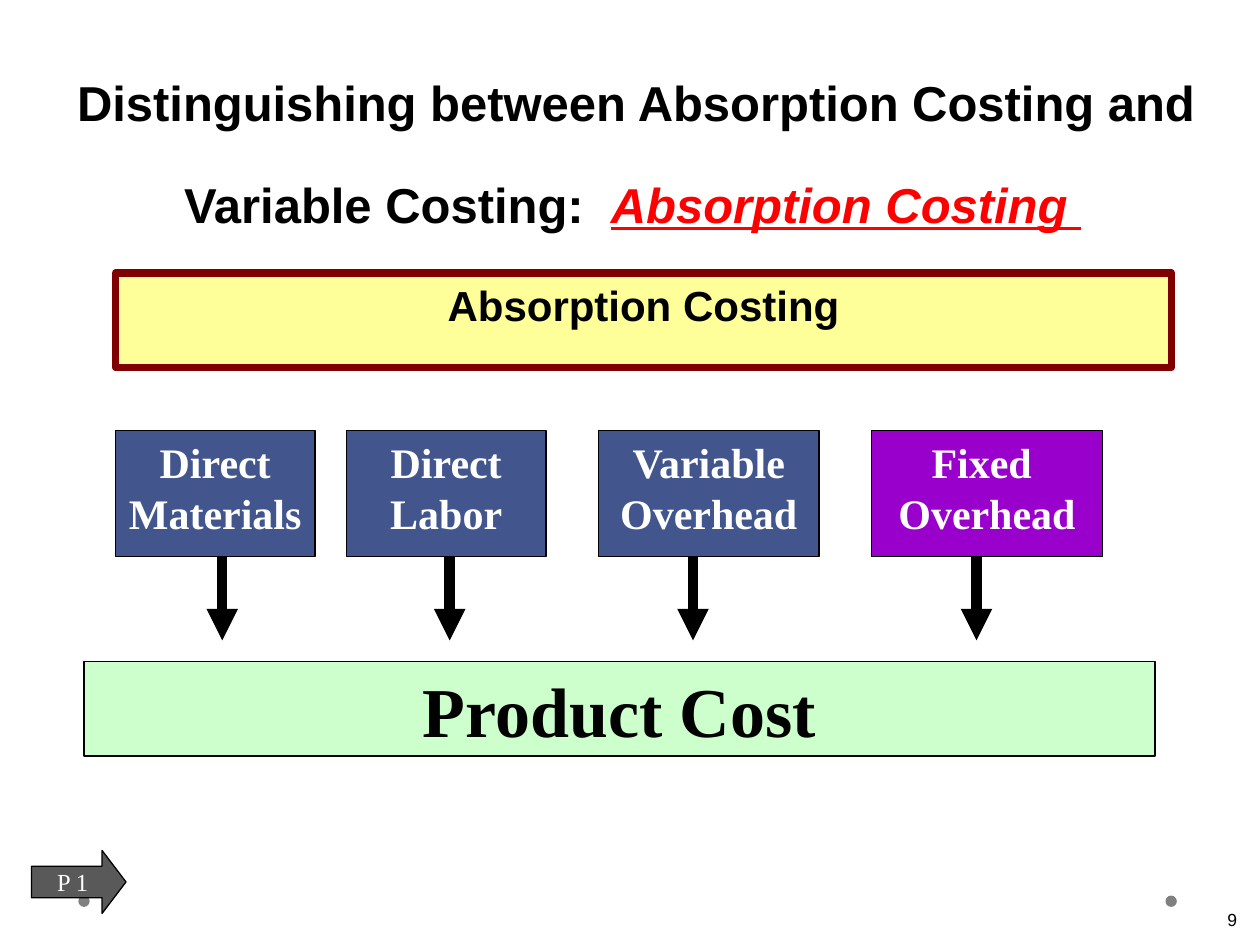
from lxml.etree import SubElement
from pptx import Presentation
from pptx.dml.color import RGBColor
from pptx.enum.shapes import MSO_CONNECTOR, MSO_SHAPE
from pptx.enum.text import MSO_ANCHOR, PP_ALIGN
from pptx.oxml.ns import qn
from pptx.util import Pt

COLORS = {
    "black": "000000", "white": "FFFFFF", "red": "FF0000", "dot": "808080",
    "yellow": "FFFF99", "maroon": "800000", "blue": "42568D",
    "purple": "9900CC", "green": "CCFFCC", "gray": "595959",
}
SERIF = "Times New Roman"


def add_run(p, text, size, color="black", font="Arial", bold=True, italic=False, underline=False):
    r = p.add_run()
    r.text = text
    f = r.font
    f.name, f.size, f.bold, f.italic, f.underline = font, Pt(size), bold, italic, underline
    f.color.rgb = RGBColor.from_string(COLORS[color])


def add_box(kind, x, y, w, h, fill, line="black", weight=0.75):
    sp = s.shapes.add_shape(kind, Pt(x), Pt(y), Pt(w), Pt(h))
    sp.shadow.inherit = False
    sp.fill.solid()
    sp.fill.fore_color.rgb = RGBColor.from_string(COLORS[fill])
    if line:
        sp.line.color.rgb = RGBColor.from_string(COLORS[line])
        sp.line.width = Pt(weight)
    else:
        sp.line.fill.background()
    sp.text_frame.vertical_anchor = MSO_ANCHOR.TOP
    sp.text_frame.paragraphs[0].alignment = PP_ALIGN.CENTER
    return sp


prs = Presentation()
prs.slide_width, prs.slide_height = Pt(720), Pt(540)
s = prs.slides.add_slide(prs.slide_layouts[5])

# Title
title = s.shapes.title
title.left, title.top, title.width, title.height = Pt(6.5), Pt(41.8), Pt(714), Pt(95)
tf = title.text_frame
tf.word_wrap = True
tf.vertical_anchor = MSO_ANCHOR.BOTTOM
p = tf.paragraphs[0]
p.alignment = PP_ALIGN.CENTER
p.line_spacing = Pt(58)
add_run(p, "Distinguishing between Absorption Costing and Variable Costing:  ", 28)
add_run(p, "Absorption", 28, "red", italic=True, underline=True)
add_run(p, " ", 28, "red", underline=True)
add_run(p, "Costing ", 28, "red", italic=True, underline=True)
add_run(p, " ", 16, "red", "TeX Gyre Pagella", bold=False)

# Footer dots
for x in (44.75, 666):
    add_box(MSO_SHAPE.OVAL, x, 511.75, 6.5, 6.5, "dot", line=None)

# Heading band
band = add_box(MSO_SHAPE.RECTANGLE, 66, 156, 603.5, 54, "yellow", "maroon", 4.25)
add_run(band.text_frame.paragraphs[0], "Absorption Costing", 24)

# Cost components, each with an arrow down to the product cost
components = [
    (66, 114, 127, "blue", ["Direct Materials"]),
    (198, 114, 257, "blue", ["Direct Labor"]),
    (342, 126, 396, "blue", ["Variable Overhead"]),
    (498, 132, 558, "purple", ["Fixed ", "Overhead"]),
]
for x, w, arrow_x, fill, lines in components:
    arrow = s.shapes.add_connector(MSO_CONNECTOR.STRAIGHT, Pt(arrow_x), Pt(294), Pt(arrow_x), Pt(366))
    arrow.line.color.rgb = RGBColor.from_string(COLORS["black"])
    arrow.line.width = Pt(6)
    SubElement(arrow.line._get_or_add_ln(), qn("a:tailEnd"), type="triangle")
    SubElement(arrow._element.spPr, qn("a:effectLst"))

    tf = add_box(MSO_SHAPE.RECTANGLE, x, 246, w, 72, fill).text_frame
    for i, text in enumerate(lines):
        p = tf.add_paragraph() if i else tf.paragraphs[0]
        p.alignment = PP_ALIGN.CENTER
        add_run(p, text, 24, "white", SERIF)

# Product cost
product = add_box(MSO_SHAPE.RECTANGLE, 48, 378, 612, 54, "green")
add_run(product.text_frame.paragraphs[0], "Product Cost", 40, font=SERIF)

# Page number
tf = s.shapes.add_textbox(Pt(672), Pt(516), Pt(42), Pt(18)).text_frame
tf.word_wrap = True
tf.paragraphs[0].alignment = PP_ALIGN.RIGHT
add_run(tf.paragraphs[0], "9", 10, bold=False)

# Learning objective marker
marker = add_box(MSO_SHAPE.RIGHT_ARROW, 18, 486, 54, 36, "gray")
marker.adjustments[0], marker.adjustments[1] = 0.5, 0.38
tf = marker.text_frame
tf.word_wrap = False
tf.vertical_anchor = MSO_ANCHOR.MIDDLE
add_run(tf.paragraphs[0], "P 1", 14, "white", SERIF, bold=False)

prs.save("out.pptx")
